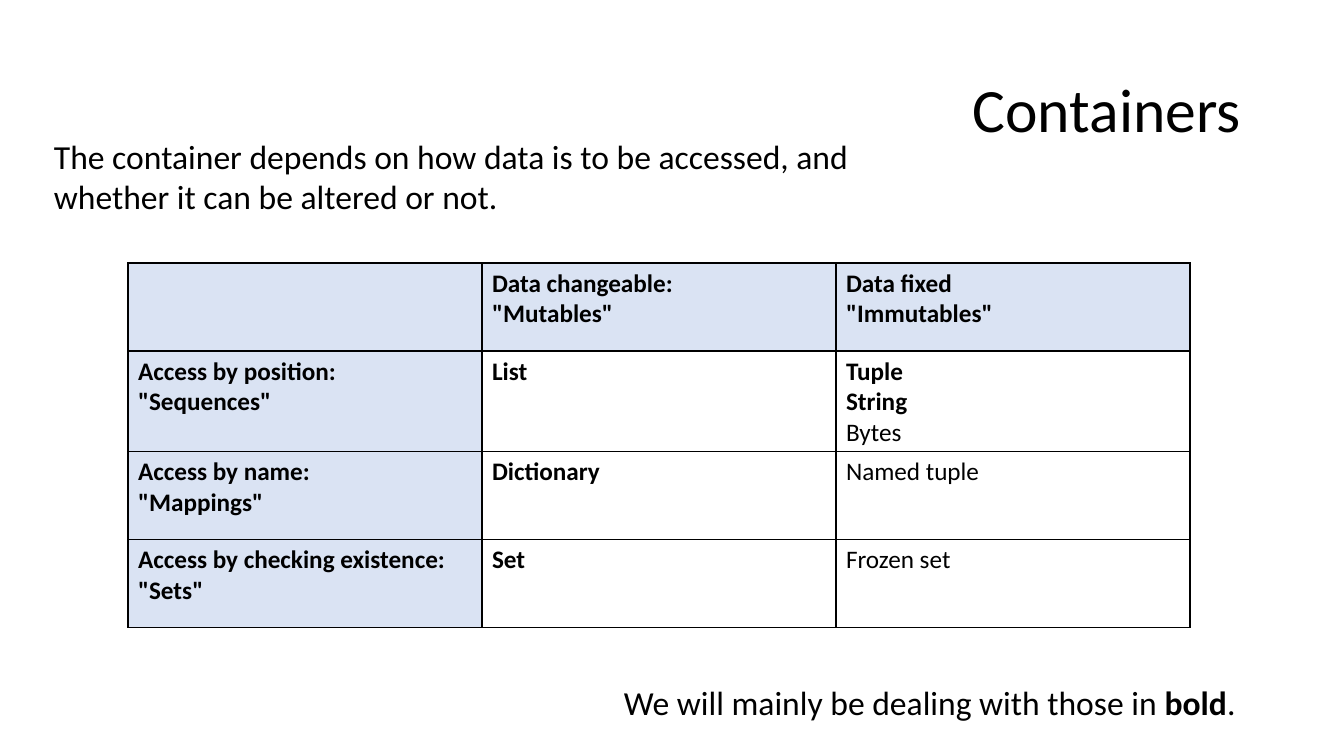
import pptx
import pptx.dml.color
import pptx.enum.text
import pptx.oxml
import pptx.oxml.ns
import pptx.util

PX = 914400 / 100.8
BLACK, HEADING_FILL = "000000", "DAE3F3"
ALIGN = pptx.enum.text.PP_ALIGN
ANCHOR = pptx.enum.text.MSO_ANCHOR

CONTAINERS = [
    [[], ["Data changeable:", '"Mutables"'], ["Data fixed", '"Immutables"']],
    [["Access by position:", '"Sequences"'], ["List"], ["Tuple", "String", "Bytes"]],
    [["Access by name:", '"Mappings"'], ["Dictionary"], ["Named tuple"]],
    [["Access by checking existence:", '"Sets"'], ["Set"], ["Frozen set"]],
]
MINOR_TYPES = {"Bytes", "Named tuple", "Frozen set"}


def px(n):
    return pptx.util.Emu(round(n * PX))


def rgb(color):
    return pptx.dml.color.RGBColor.from_string(color)


def set_all(obj, values):
    for name, value in values.items():
        setattr(obj, name, value)


def add_run(p, text, size, bold=False):
    r = p.add_run()
    r.text = text
    set_all(r.font, {"name": "Calibri", "size": pptx.util.Pt(size), "bold": bold})
    r.font.color.rgb = rgb(BLACK)


def add_text(slide, box, runs, size, frame=None, paragraph=None):
    """Place one paragraph of (text, bold) runs in the box."""
    tf = slide.shapes.add_textbox(*map(px, box)).text_frame
    set_all(tf, {"word_wrap": True, **(frame or {})})
    p = tf.paragraphs[0]
    set_all(p, paragraph or {})
    for text, bold in runs:
        add_run(p, text, size, bold)


def add_borders(cell):
    tc_pr = cell._tc.get_or_add_tcPr()
    for i, side in enumerate(("lnL", "lnR", "lnT", "lnB")):
        tc_pr.insert(i, pptx.oxml.parse_xml(
            f'<a:{side} {pptx.oxml.ns.nsdecls("a")} w="12700"><a:solidFill>'
            f'<a:srgbClr val="{BLACK}"/></a:solidFill></a:{side}>'))


def fill_cell(cell, lines, heading):
    if heading:
        cell.fill.solid()
        cell.fill.fore_color.rgb = rgb(HEADING_FILL)
    else:
        cell.fill.background()
    add_borders(cell)
    tf = cell.text_frame
    for i, line in enumerate(lines):
        p = tf.add_paragraph() if i else tf.paragraphs[0]
        add_run(p, line, 18, line not in MINOR_TYPES)


def add_container_table(slide, box):
    x, y, w, h = box
    rows, cols = len(CONTAINERS), len(CONTAINERS[0])
    table = slide.shapes.add_table(rows, cols, px(x), px(y), px(w), px(h)).table
    set_all(table, {"first_row": False, "horz_banding": False})
    for col in table.columns:
        col.width = px(w // cols)
    for row in table.rows:
        row.height = px(h // rows)
    for i, row in enumerate(CONTAINERS):
        for j, lines in enumerate(row):
            fill_cell(table.cell(i, j), lines, heading=i == 0 or j == 0)


def add_containers_slide(prs):
    slide = prs.slides.add_slide(prs.slide_layouts[6])
    add_text(slide, (92, 40, 1159, 146), [("Containers", False)], 44,
             {"vertical_anchor": ANCHOR.MIDDLE},
             {"alignment": ALIGN.RIGHT, "line_spacing": 0.9})
    add_container_table(slide, (128, 263, 1062, 352))
    add_text(slide, (44, 131, 820, 92),
             [("The container depends on how data is to be accessed, "
               "and whether it can be altered or not.", False)], 24)
    add_text(slide, (614, 677, 637, 50),
             [("We will mainly be dealing with those in ", False),
              ("bold", True), (".", False)], 24, {"word_wrap": False})


def main():
    prs = pptx.Presentation()
    set_all(prs, {"slide_width": px(1344), "slide_height": px(756)})
    add_containers_slide(prs)
    prs.save("out.pptx")


if __name__ == "__main__":
    main()
